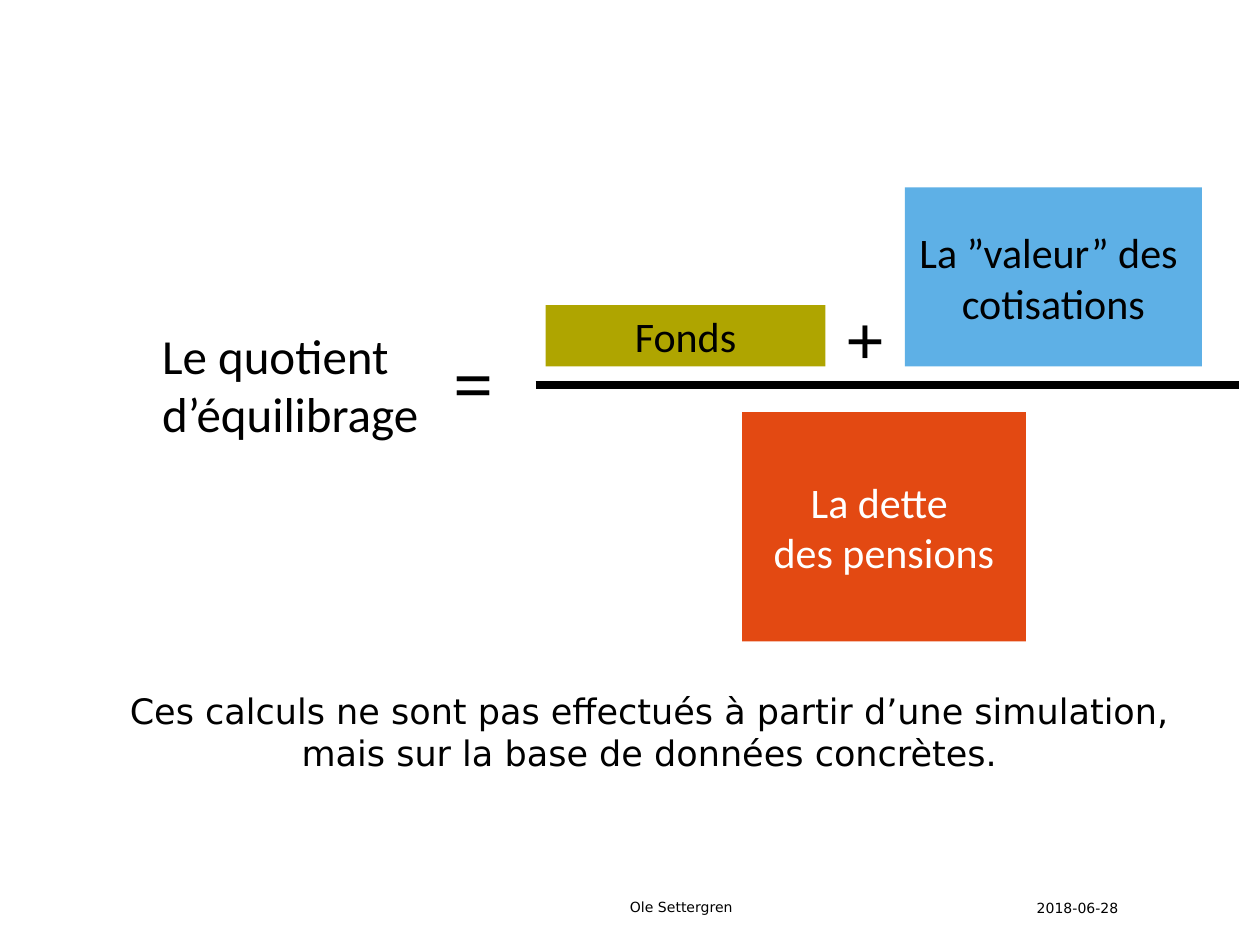
from pptx import Presentation, util as u
from pptx.dml.color import RGBColor
from pptx.enum import shapes, text
from lxml import etree

BLACK, WHITE = "000000", "FFFFFF"
BODY, SIGN, PLAIN = "Calibri", "Times New Roman", "DejaVu Sans"
CENTER = text.PP_ALIGN.CENTER
MIDDLE, BOTTOM = text.MSO_ANCHOR.MIDDLE, text.MSO_ANCHOR.BOTTOM


def color(hex_value):
    return RGBColor.from_string(hex_value)


def write(tf, lines, size, font, ink=BLACK, align=None, bold=None):
    for i, line in enumerate(lines):
        p = tf.paragraphs[0] if i == 0 else tf.add_paragraph()
        p.alignment = align
        r = p.add_run()
        r.text = line
        r.font.size, r.font.name, r.font.bold = u.Pt(size), font, bold
        r.font.color.rgb = color(ink)


def add_label(s, box, line, size, font, wrap=True, grow=False, anchor=None, **style):
    tf = s.shapes.add_textbox(*map(u.Cm, box)).text_frame
    tf.word_wrap = wrap
    if grow:
        tf.auto_size = text.MSO_AUTO_SIZE.SHAPE_TO_FIT_TEXT
    if anchor is not None:
        tf.vertical_anchor = anchor
    write(tf, [line], size, font, **style)


def add_block(s, box, lines, fill, ink=BLACK):
    sp = s.shapes.add_shape(shapes.MSO_SHAPE.RECTANGLE, *map(u.Cm, box))
    sp.shadow.inherit = False
    sp.fill.solid()
    sp.fill.fore_color.rgb = color(fill)
    sp.line.fill.background()
    tf = sp.text_frame
    tf.word_wrap = False
    tf.vertical_anchor = MIDDLE
    write(tf, lines, 24, BODY, ink, CENTER)


def add_sign(s, left, top, sign):
    add_label(s, (left, top, 1.32, 1.96), sign, 40, SIGN, wrap=False, grow=True, bold=True)


def add_bar(s, left, right, y):
    bar = s.shapes.add_connector(shapes.MSO_CONNECTOR.STRAIGHT,
                                 u.Cm(left), u.Cm(y), u.Cm(right), u.Cm(y))
    bar.line.color.rgb = color(BLACK)
    bar.line.width = u.Pt(4.5)
    sp_pr = bar.element.spPr
    ns = "http://schemas.openxmlformats.org/drawingml/2006/main"
    etree.SubElement(sp_pr, f"{{{ns}}}effectLst")


def main():
    prs = Presentation()
    prs.slide_width, prs.slide_height = u.Cm(25.4), u.Cm(19.05)
    s = prs.slides.add_slide(prs.slide_layouts[6])

    # Left side of the equation
    add_label(s, (3.02, 6.43, 5.89, 2.64), "Le quotient d’équilibrage", 28, BODY, grow=True)
    add_sign(s, 8.89, 6.73, "=")

    # Fraction: fund plus contributions over pension debt
    add_bar(s, 10.8, 24.97, 7.77)
    add_block(s, (11, 6.15, 5.64, 1.24), ["Fonds"], "AFA500")
    add_sign(s, 16.79, 5.84, "+")
    add_block(s, (18.24, 3.78, 5.99, 3.61), ["La ”valeur” des ", "cotisations"], "5EB0E6")
    add_block(s, (14.96, 8.31, 5.72, 4.62), ["La dette ", "des pensions"], "E34912", WHITE)

    # Remark
    add_label(s, (1.68, 13.77, 22.83, 1.96),
              "Ces calculs ne sont pas effectués à partir d’une simulation, "
              "mais sur la base de données concrètes.",
              20, PLAIN, grow=True, align=CENTER)

    # Author and date
    add_label(s, (12.45, 17.98, 8, 0.61), "Ole Settergren", 8, PLAIN, anchor=MIDDLE)
    add_label(s, (20.65, 17.98, 2.49, 0.61), "2018-06-28", 8, PLAIN, anchor=BOTTOM)

    prs.save("out.pptx")


if __name__ == "__main__":
    main()
